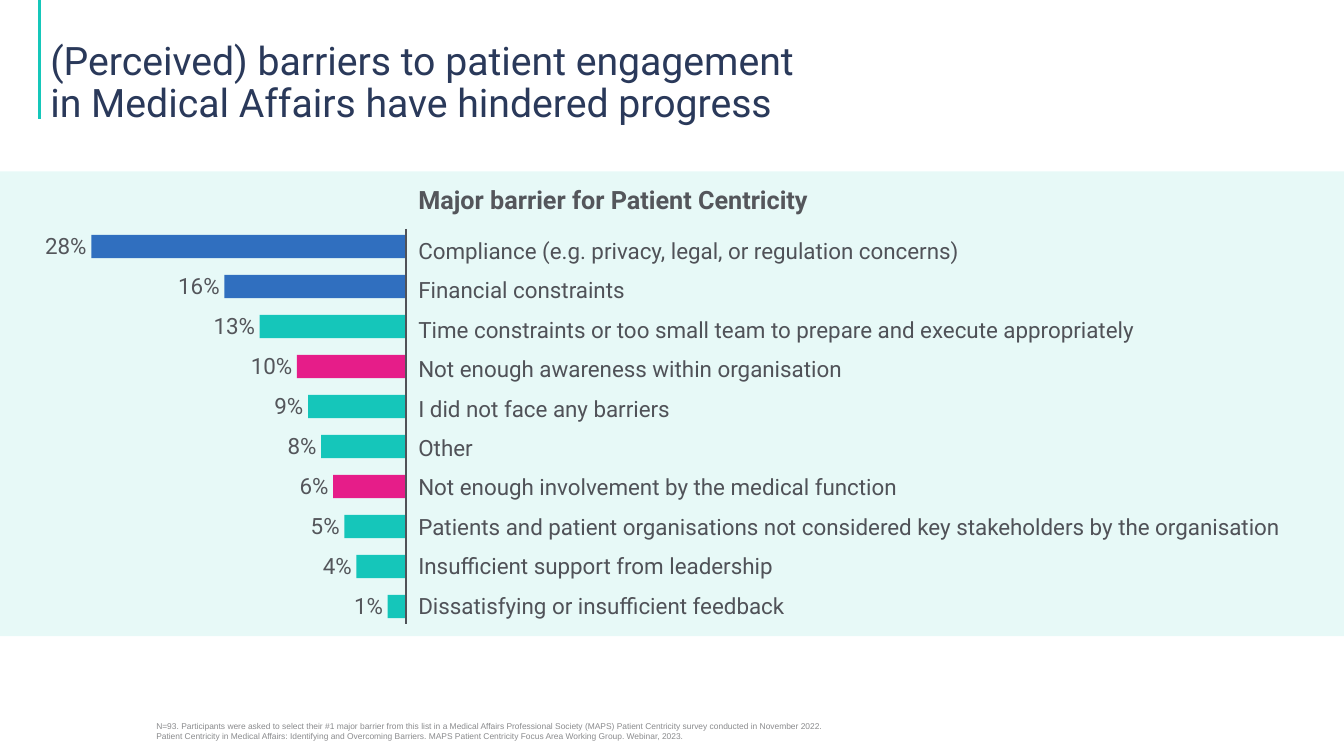
from dataclasses import dataclass

from lxml.etree import SubElement
from pptx import Presentation
from pptx.dml.color import RGBColor
from pptx.dml.fill import FillFormat
from pptx.enum.shapes import MSO_CONNECTOR as Link, MSO_SHAPE as Kind
from pptx.enum.text import MSO_ANCHOR as Anchor, PP_ALIGN as Align
from pptx.oxml.ns import qn
from pptx.util import Inches, Pt

TEAL, BLUE, PINK = "15C6BA", "306FBF", "E61D89"
NAVY, GREY, SLATE, PALE = "2A395A", "505258", "54565B", "8A8B8D"

# All lengths are percentages of the slide's width or height.
AXIS, TEXT = 30.19, 31.13
BAR_TOP, BAR_STEP, BAR_TALL = 31.07, 5.29, 3.07
TAG_TOP, TAG_STEP, LINE_TALL = 31.33, 5.22, 3.6
RATE_TOP, RATE_WIDE, RATE_GAP = 30.67, 3.8, 0.35


@dataclass(frozen=True)
class Box:
    left: float
    top: float
    wide: float
    tall: float


@dataclass(frozen=True)
class Style:
    size: float
    color: str
    face: str = "Roboto"
    bold: bool = False
    align: Align = Align.LEFT
    anchor: Anchor = Anchor.TOP
    lead: float = 1.0


@dataclass(frozen=True)
class Barrier:
    name: str
    rate: int
    bar: float
    color: str = TEAL
    wide: float = 48.45


BARRIERS = [
    Barrier("Compliance (e.g. privacy, legal, or regulation concerns)", 28, 23.4, BLUE),
    Barrier("Financial constraints", 16, 13.5, BLUE),
    Barrier("Time constraints or too small team to prepare and execute appropriately",
            13, 10.87, wide=57.38),
    Barrier("Not enough awareness within organisation", 10, 8.1, PINK),
    Barrier("I did not face any barriers", 9, 7.27),
    Barrier("Other", 8, 6.3),
    Barrier("Not enough involvement by the medical function", 6, 5.4, PINK),
    Barrier("Patients and patient organisations not considered key stakeholders "
            "by the organisation", 5, 4.57, wide=66.68),
    Barrier("Insufficient support from leadership", 4, 3.67),
    Barrier("Dissatisfying or insufficient feedback", 1, 1.35),
]

deck = Presentation()
deck.slide_width, deck.slide_height = Inches(13.33), Inches(7.5)
slide = deck.slides.add_slide(deck.slide_layouts[6])
shapes = slide.shapes


def across(share: float) -> int:
    return round(deck.slide_width * share / 100)


def down(share: float) -> int:
    return round(deck.slide_height * share / 100)


def place(box: Box) -> tuple[int, int, int, int]:
    return across(box.left), down(box.top), across(box.wide), down(box.tall)


def paint(fill: FillFormat, color: str) -> None:
    fill.solid()
    fill.fore_color.rgb = RGBColor.from_string(color)


def add_rect(box: Box, color: str, alpha: int = 100) -> None:
    rect = shapes.add_shape(Kind.RECTANGLE, *place(box))
    rect.shadow.inherit = False
    rect.line.fill.background()
    paint(rect.fill, color)
    if alpha < 100:
        tint = rect._element.spPr.find(qn("a:solidFill")).find(qn("a:srgbClr"))
        SubElement(tint, qn("a:alpha")).set("val", str(alpha * 1000))


def add_rule(left: float, top: float, end: float, color: str, width: float) -> None:
    """Draw a vertical line."""
    x = across(left)
    rule = shapes.add_connector(Link.STRAIGHT, x, down(top), x, down(end))
    paint(rule.line.fill, color)
    rule.line.width = Pt(width)
    SubElement(rule._element.spPr, qn("a:effectLst"))


def add_text(box: Box, text: str, style: Style) -> None:
    frame = shapes.add_textbox(*place(box)).text_frame
    frame.word_wrap = True
    frame.margin_left = frame.margin_right = 0
    frame.margin_top = frame.margin_bottom = 0
    frame.vertical_anchor = style.anchor
    para = frame.paragraphs[0]
    para.text = text
    para.alignment = style.align
    para.line_spacing = style.lead
    font = para.font
    font.name, font.size, font.bold = style.face, Pt(style.size), style.bold
    paint(font.fill, style.color)


def add_row(row: int, item: Barrier) -> None:
    left = AXIS - item.bar
    add_rect(Box(left, BAR_TOP + row * BAR_STEP, item.bar, BAR_TALL), item.color)
    rate = Box(left - RATE_GAP - RATE_WIDE, RATE_TOP + row * BAR_STEP, RATE_WIDE, LINE_TALL)
    add_text(rate, f"{item.rate}%", Style(16, SLATE, align=Align.RIGHT))
    tag = Box(TEXT, TAG_TOP + row * TAG_STEP, item.wide, LINE_TALL)
    add_text(tag, item.name, Style(16, GREY))


def main() -> None:
    add_rule(2.93, 0, 15.73, "15C7BA", 2.25)
    add_rect(Box(0, 22.67, 100, 61.47), TEAL, alpha=10)
    add_text(Box(3.75, 5.33, 90.82, 11.33),
             "(Perceived) barriers to patient engagement\n"
             "in Medical Affairs have hindered progress",
             Style(28, NAVY, anchor=Anchor.BOTTOM, lead=0.9))
    add_text(Box(TEXT, 24.4, 64.95, 4), "Major barrier for Patient Centricity",
             Style(18, SLATE, bold=True))
    for row, item in enumerate(BARRIERS):
        add_row(row, item)
    add_rule(AXIS, 30.27, 82.53, GREY, 1.5)
    add_text(Box(11.63, 92.67, 83.1, 5.33),
             "N=93. Participants were asked to select their #1 major barrier from this list "
             "in a Medical Affairs Professional Society (MAPS) Patient Centricity survey "
             "conducted in November 2022.\n"
             "Patient Centricity in Medical Affairs: Identifying and Overcoming Barriers. "
             "MAPS Patient Centricity Focus Area Working Group. Webinar, 2023.",
             Style(6, PALE, face="Arial", anchor=Anchor.BOTTOM))
    deck.save("out.pptx")


if __name__ == "__main__":
    main()
